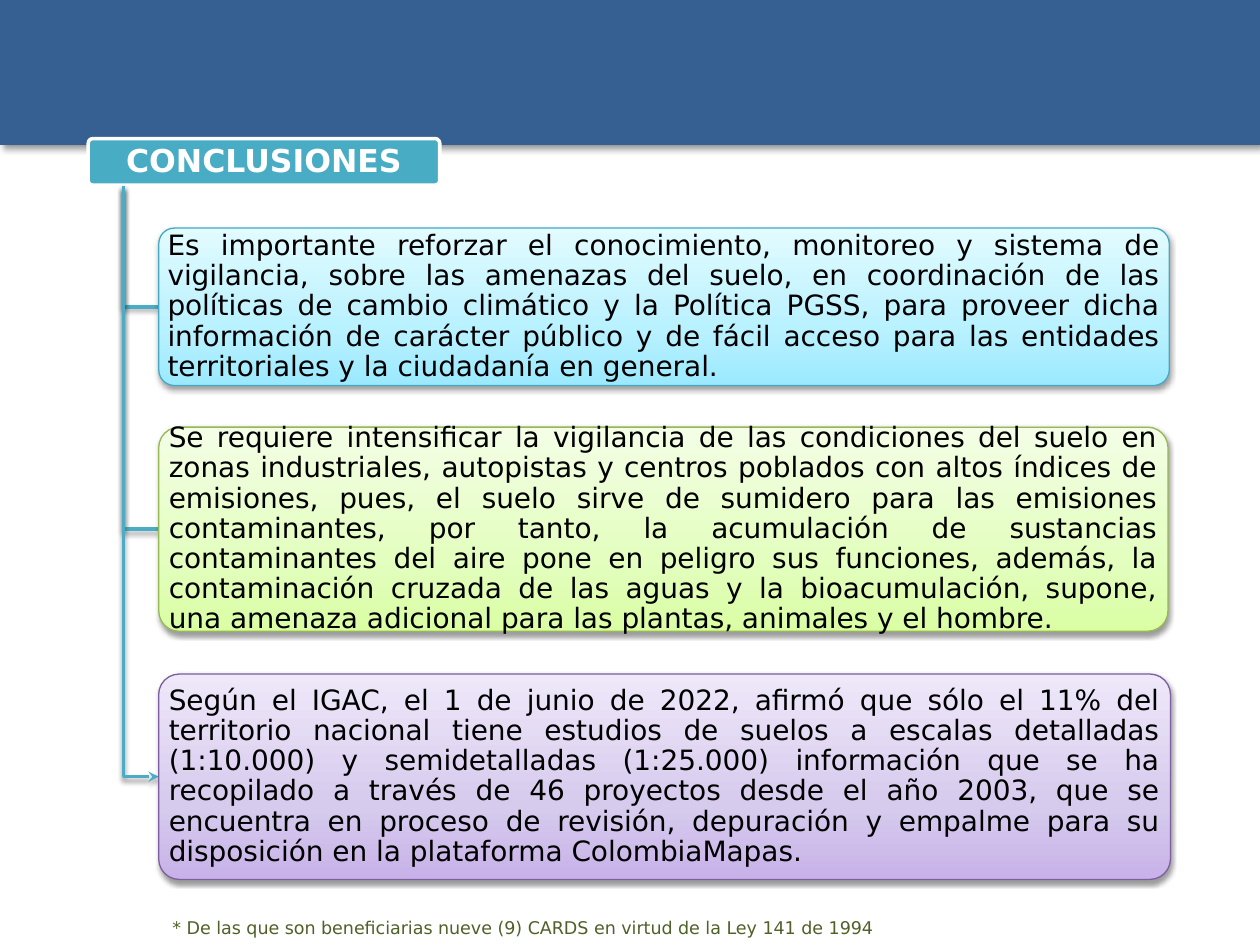
from dataclasses import dataclass

from lxml import etree
from pptx import Presentation
from pptx.dml.color import RGBColor
from pptx.enum import shapes, text
from pptx.oxml import ns
from pptx.util import Inches, Pt

FONT = "DejaVu Sans"
WHITE = RGBColor(0xFF, 0xFF, 0xFF)
BLACK = RGBColor(0, 0, 0)
NAVY = RGBColor(0x36, 0x60, 0x92)
TEAL = RGBColor(0x49, 0xAC, 0xC5)
AQUA = RGBColor(0x4B, 0xAC, 0xC6)
OLIVE = RGBColor(0x4F, 0x61, 0x28)
BLUE = RGBColor(0x45, 0xA9, 0xC4)
GREEN = RGBColor(0x97, 0xB8, 0x53)
PURPLE = RGBColor(0x7C, 0x5F, 0x9F)
SKY = [RGBColor(0x9B, 0xE9, 0xFF), RGBColor(0xB8, 0xF1, 0xFF), RGBColor(0xE2, 0xFB, 0xFF)]
LIME = [RGBColor(0xDA, 0xFE, 0xA4), RGBColor(0xE3, 0xFE, 0xBF), RGBColor(0xF4, 0xFE, 0xE6)]
LILAC = [RGBColor(0xC8, 0xB2, 0xE9), RGBColor(0xD6, 0xCA, 0xED), RGBColor(0xEF, 0xE8, 0xFA)]
STOPS = (0, 35, 100)
TRUNK, TOP, LEFT = 0.98, 1.48, 1.26

Box = tuple[float, float, float, float]


@dataclass
class Card:
    top: float
    width: float
    height: float
    edge: RGBColor
    tints: list[RGBColor]
    words: str
    inset: float = 0.05


CARDS = [
    Card(1.81, 8.02, 1.25, BLUE, SKY,
         "Es importante reforzar el conocimiento, monitoreo y sistema de vigilancia, "
         "sobre las amenazas del suelo, en coordinación de las políticas de cambio "
         "climático y la Política PGSS, para proveer dicha información de carácter "
         "público y de fácil acceso para las entidades territoriales y la ciudadanía "
         "en general.", 0.04),
    Card(3.39, 8.01, 1.62, GREEN, LIME,
         "Se requiere intensificar la vigilancia de las condiciones del suelo en zonas "
         "industriales, autopistas y centros poblados con altos índices de emisiones, "
         "pues, el suelo sirve de sumidero para las emisiones contaminantes, por tanto, "
         "la acumulación de sustancias contaminantes del aire pone en peligro sus "
         "funciones, además, la contaminación cruzada de las aguas y la bioacumulación, "
         "supone, una amenaza adicional para las plantas, animales y el hombre."),
    Card(5.35, 8.03, 1.63, PURPLE, LILAC,
         "Según el IGAC, el 1 de junio de 2022, afirmó que sólo el 11% del territorio "
         "nacional tiene estudios de suelos a escalas detalladas (1:10.000) y "
         "semidetalladas (1:25.000) información que se ha recopilado a través de 46 "
         "proyectos desde el año 2003, que se encuentra en proceso de revisión, "
         "depuración y empalme para su disposición en la plataforma ColombiaMapas."),
]


def add(parent, tag: str, **attrs):
    return etree.SubElement(parent, ns.qn(tag), {k: str(v) for k, v in attrs.items()})


def shade(shape, alpha: int = 38, blur: float = 3.1, dist: float = 1.6, turn: int = 90) -> None:
    """Give the shape an outer black shadow."""
    shape.shadow.inherit = False
    glow = add(shape._element.spPr.find(ns.qn("a:effectLst")), "a:outerShdw",
               blurRad=Pt(blur), dist=Pt(dist), dir=turn * 60000,
               algn="ctr", rotWithShape=0)
    add(add(glow, "a:srgbClr", val=BLACK), "a:alpha", val=alpha * 1000)


def blend(shape, tints: list[RGBColor]) -> None:
    """Fill with a gradient that rises from the bottom edge."""
    shape.fill.gradient()
    shape.fill.gradient_angle = 90
    stops = shape._element.spPr.find(".//" + ns.qn("a:gsLst"))
    for old in list(stops):
        stops.remove(old)
    for at, tint in zip(STOPS, tints):
        add(add(stops, "a:gs", pos=at * 1000), "a:srgbClr", val=tint)


def panel(slide, box: Box, edge: RGBColor, weight: float):
    shape = slide.shapes.add_shape(shapes.MSO_SHAPE.ROUNDED_RECTANGLE, *map(Inches, box))
    shape.adjustments[0] = 0.1
    shape.shadow.inherit = False
    shape.line.color.rgb = edge
    shape.line.width = Pt(weight)
    return shape


def write(slide, box: Box, words: str, size: int, color: RGBColor, pad: tuple[float, float],
          align=None, lead=None, bold=None, anchor=text.MSO_ANCHOR.MIDDLE) -> None:
    frame = slide.shapes.add_textbox(*map(Inches, box)).text_frame
    frame.word_wrap = True
    frame.vertical_anchor = anchor
    frame.margin_left = frame.margin_right = Inches(pad[0])
    frame.margin_top = frame.margin_bottom = Inches(pad[1])
    frame.text = words
    para = frame.paragraphs[0]
    para.alignment = align
    para.line_spacing = lead
    font = para.runs[0].font
    font.name, font.size, font.bold = FONT, Pt(size), bold
    font.color.rgb = color


def branch(slide, end: float, arrow: bool) -> None:
    """Draw the elbow from the heading down to a card's middle."""
    path = slide.shapes.build_freeform(Inches(TRUNK), Inches(TOP))
    path.add_line_segments([(Inches(TRUNK), Inches(end)), (Inches(LEFT), Inches(end))],
                           close=False)
    shape = path.convert_to_shape()
    shape.fill.background()
    shape.line.color.rgb = AQUA
    shape.line.width = Pt(2)
    shade(shape)
    if arrow:
        add(shape._element.spPr.find(ns.qn("a:ln")), "a:tailEnd", type="stealth")


def draw(slide, card: Card, last: bool) -> None:
    branch(slide, card.top + card.height / 2, last)
    shape = panel(slide, (LEFT, card.top, card.width, card.height), card.edge, 0.75)
    blend(shape, card.tints)
    shade(shape)
    gap = card.inset
    write(slide, (LEFT + gap, card.top + gap, card.width - 2 * gap, card.height - 2 * gap),
          card.words, 16, BLACK, (0.03, 0.02), text.PP_ALIGN.JUSTIFY, 0.9)


def main() -> None:
    deck = Presentation()
    deck.slide_width, deck.slide_height = Inches(10), Inches(7.5)
    slide = deck.slides.add_slide(deck.slide_layouts[6])

    band = slide.shapes.add_shape(shapes.MSO_SHAPE.RECTANGLE, 0, 0, Inches(10), Inches(1.15))
    band.fill.solid()
    band.fill.fore_color.rgb = NAVY
    band.line.fill.background()
    shade(band, 40, 4, 3, 45)

    head = panel(slide, (0.7, 1.1, 2.79, 0.37), WHITE, 2)
    head.fill.solid()
    head.fill.fore_color.rgb = TEAL
    write(slide, (0.71, 1.11, 2.77, 0.35), "CONCLUSIONES", 18, WHITE, (0.04, 0.02),
          text.PP_ALIGN.CENTER, 0.9, True)

    for card in CARDS:
        draw(slide, card, card is CARDS[-1])

    write(slide, (1.27, 7.23, 5.93, 0.27),
          "* De las que son beneficiarias nueve (9) CARDS en virtud de la Ley 141 de 1994",
          10, OLIVE, (0.1, 0.05), anchor=text.MSO_ANCHOR.TOP)
    deck.save("out.pptx")


if __name__ == "__main__":
    main()
